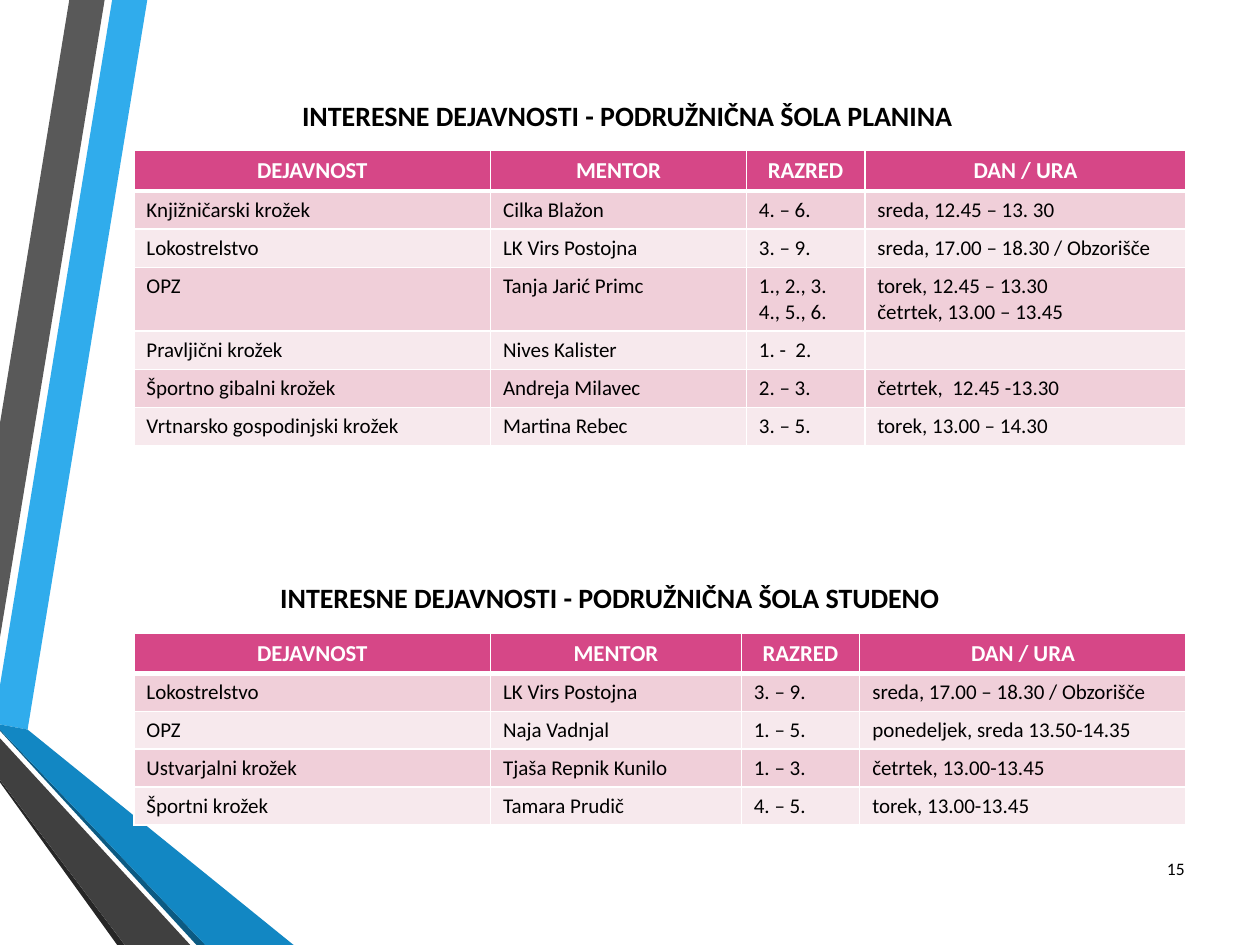
import pptx
import pptx.util
import pptx.dml.color
import pptx.enum.text
import pptx.oxml
import pptx.oxml.ns
from lxml import etree

Pt = pptx.util.Pt
ALIGN = pptx.enum.text.PP_ALIGN
ANCHOR = pptx.enum.text.MSO_ANCHOR
qn = pptx.oxml.ns.qn


def color(code):
    return pptx.dml.color.RGBColor.from_string(code)


class Page:
    face = "Calibri"
    ink = "000000"
    white = "FFFFFF"
    head = "D64787"
    bands = ("F0CFD9", "F7E9ED")

    def __init__(self, slide):
        self.slide = slide

    def band(self, fill, points):
        """Draw a closed filled outline."""
        start, *rest = [(Pt(x), Pt(y)) for x, y in points]
        build = self.slide.shapes.build_freeform(*start)
        build.add_line_segments(rest, close=True)
        shape = build.convert_to_shape()
        shape.shadow.inherit = False
        shape.fill.solid()
        shape.fill.fore_color.rgb = color(fill)
        shape.line.fill.background()

    def style(self, para, size, align, ink=ink, bold=False):
        para.alignment = align
        font = para.font
        font.name, font.size, font.bold = self.face, Pt(size), bold
        font.color.rgb = color(ink)

    def text(self, box, words, size, align, bold=False, anchor=ANCHOR.TOP, space=1.0):
        frame = self.slide.shapes.add_textbox(*map(Pt, box)).text_frame
        frame.word_wrap = True
        frame.vertical_anchor = anchor
        frame.text = words
        para = frame.paragraphs[0]
        para.line_spacing = space
        self.style(para, size, align, bold=bold)

    def title(self, left, top, words):
        self.text((left, top, 620.6, 31.7), words, 16, ALIGN.CENTER, True, space=0.9)

    def border(self, cell, low):
        """Give the cell white edges, with its own width at the bottom."""
        props = cell._tc.get_or_add_tcPr()
        for side, width in (("L", 1), ("R", 1), ("T", 1), ("B", low)):
            line = etree.SubElement(props, qn("a:ln" + side), w=str(Pt(width)))
            fill = etree.SubElement(line, qn("a:solidFill"))
            etree.SubElement(fill, qn("a:srgbClr"), val=self.white)

    def cell(self, cell, words, row):
        top = row == 0
        self.border(cell, 3 if top else 1)
        cell.fill.solid()
        cell.fill.fore_color.rgb = color(self.head if top else self.bands[(row - 1) % 2])
        cell.text_frame.text = words
        for para in cell.text_frame.paragraphs:
            if top:
                self.style(para, 13, ALIGN.CENTER, self.white, True)
            else:
                self.style(para, 12, ALIGN.LEFT)
            if not words:
                etree.SubElement(para._p, qn("a:endParaRPr"), sz="1200")

    def table(self, left, top, widths, rows):
        high = 21.6
        table = self.slide.shapes.add_table(
            len(rows), len(widths), Pt(left), Pt(top),
            Pt(sum(widths)), Pt(high * len(rows))).table
        table.horz_banding = False
        for col, width in zip(table.columns, widths):
            col.width = Pt(width)
        for r, row in enumerate(rows):
            table.rows[r].height = Pt(high)
            for c, words in enumerate(row):
                self.cell(table.cell(r, c), words, r)


BANDS = [
    ("30ACEC", [(0, 391.7), (0, 414), (15.8, 416.9), (84.2, 0), (64.1, 0)]),
    ("595959", [(59.8, 0), (39.6, 0), (0, 241.9), (0, 364.3)]),
    ("262626", [(0, 445.7), (0, 447.1), (67, 540), (71.3, 540)]),
    ("0C5A82", [(0, 416.9), (0, 417.6), (112.3, 540), (117.4, 540)]),
    ("1287C3", [(0, 416.9), (117.4, 540), (167.8, 540), (15.8, 416.9), (0, 414)]),
    ("404040", [(0, 445.7), (71.3, 540), (108.7, 540), (0, 421.9)]),
]
HEAD = ("DEJAVNOST", "MENTOR", "RAZRED", "DAN / URA")
ARCHERY = ("Lokostrelstvo", "LK Virs Postojna", "3. – 9.", "sreda, 17.00 – 18.30 / Obzorišče")
PLANINA = [
    HEAD,
    ("Knjižničarski krožek", "Cilka Blažon", "4. – 6.", "sreda, 12.45 – 13. 30"),
    ARCHERY,
    ("OPZ", "Tanja Jarić Primc", "1., 2., 3.\n4., 5., 6.",
     "torek, 12.45 – 13.30\nčetrtek, 13.00 – 13.45"),
    ("Pravljični krožek", "Nives Kalister", "1. -  2.", ""),
    ("Športno gibalni krožek", "Andreja Milavec", "2. – 3.", "četrtek,  12.45 -13.30"),
    ("Vrtnarsko gospodinjski krožek", "Martina Rebec", "3. – 5.", "torek, 13.00 – 14.30"),
]
STUDENO = [
    HEAD,
    ARCHERY,
    ("OPZ", "Naja Vadnjal", "1. – 5.", "ponedeljek, sreda 13.50-14.35"),
    ("Ustvarjalni krožek", "Tjaša Repnik Kunilo", "1. – 3.", "četrtek, 13.00-13.45"),
    ("Športni krožek", "Tamara Prudič", "4. – 5.", "torek, 13.00-13.45"),
]


def main():
    deck = pptx.Presentation()
    deck.slide_width, deck.slide_height = Pt(720), Pt(540)
    page = Page(deck.slides.add_slide(deck.slide_layouts[6]))

    # Ribbons along the left edge
    for fill, points in BANDS:
        page.band(fill, points)

    # Planina school
    page.table(76.5, 86, (203.8, 146.2, 67.7, 183.6), PLANINA)
    page.title(48.2, 54.7, "INTERESNE DEJAVNOSTI - PODRUŽNIČNA ŠOLA PLANINA")

    # Studeno school
    page.title(38.2, 330.5, "INTERESNE DEJAVNOSTI - PODRUŽNIČNA ŠOLA STUDENO")
    page.table(76.5, 362, (203.8, 143.3, 67.7, 186.5), STUDENO)

    # Page number
    page.text((651.6, 481.7, 32.4, 28.8), "15", 10, ALIGN.RIGHT, anchor=ANCHOR.MIDDLE)

    deck.save("out.pptx")


if __name__ == "__main__":
    main()
